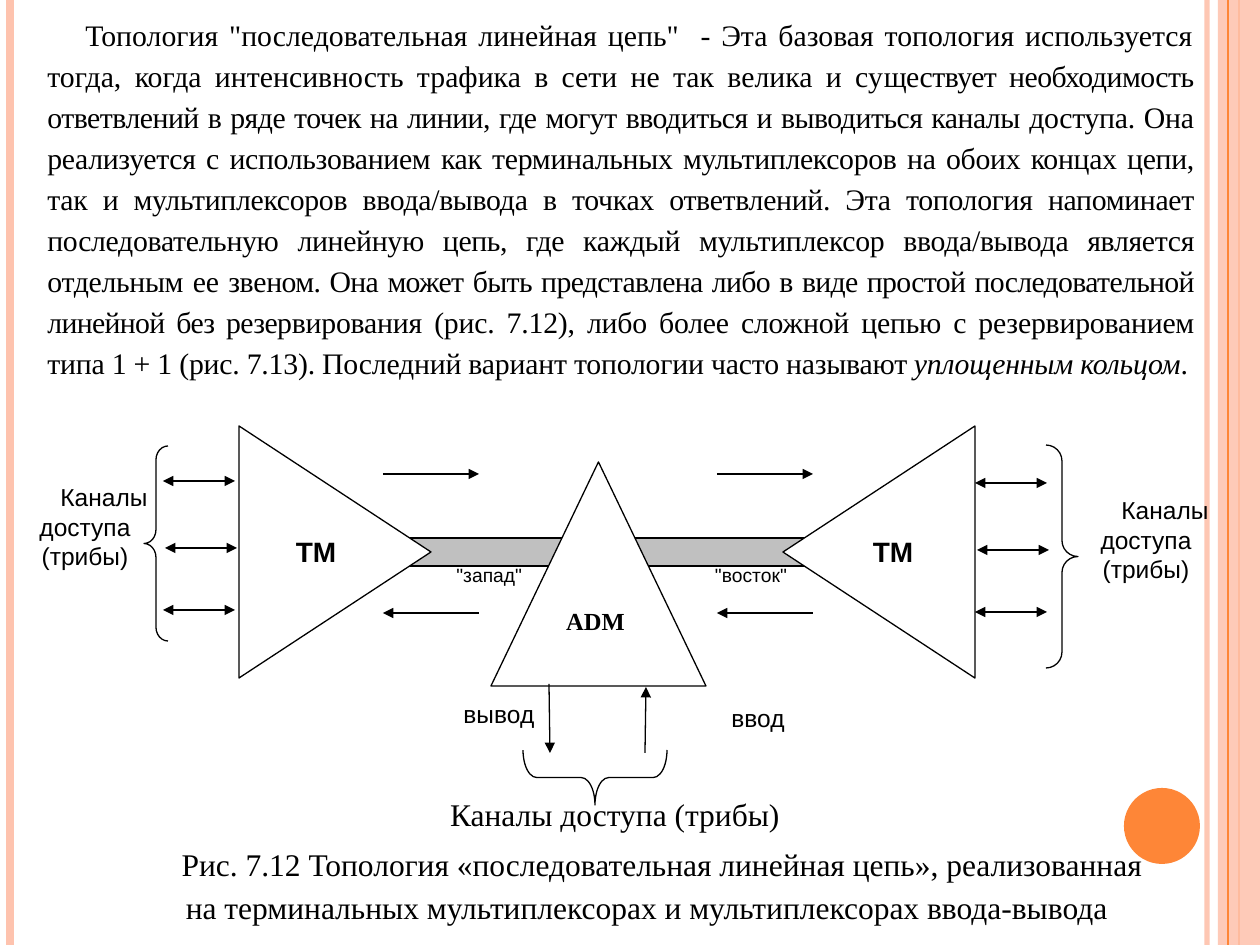
import pptx
import pptx.util
import pptx.dml.color
import pptx.enum.shapes
import pptx.enum.text
import pptx.oxml
import pptx.oxml.ns
from dataclasses import dataclass

SCALE = 914400 / 126
W, H = 1260, 945
MSO = pptx.enum.shapes.MSO_SHAPE
ALIGN = pptx.enum.text.PP_ALIGN


@dataclass(frozen=True)
class Theme:
    ink: str = "000000"
    paper: str = "FFFFFF"
    bar: str = "C0C0C0"
    accent: str = "FE8637"
    pale: str = "FEC3AE"
    serif: str = "Times New Roman"
    sans: str = "Arial"
    body: int = 17
    caption: int = 18
    node: int = 16
    label: int = 14
    small: int = 11
    stroke: float = 0.75


T = Theme()


def px(n):
    return pptx.util.Emu(round(n * SCALE))


def rgb(c):
    return pptx.dml.color.RGBColor.from_string(c)


def sub(parent, tag, **attrs):
    child = parent.makeelement(pptx.oxml.ns.qn(tag), attrs)
    parent.append(child)
    return child


def set_alpha(fill, percent):
    clr = fill._xPr.find(".//" + pptx.oxml.ns.qn("a:srgbClr"))
    sub(clr, "a:alpha", val=str(percent * 1000))


def add_text(s, box, text, font=T.sans, size=T.label, align=ALIGN.CENTER, bold=False,
             indent=38, margin=0, spacing=None, inset=None):
    sp = s.shapes.add_textbox(*map(px, box))
    tf = sp.text_frame
    tf.word_wrap = True
    if inset is not None:
        tf.margin_left = tf.margin_right = px(inset)
    p = tf.paragraphs[0]
    p.alignment = align
    p.line_spacing = spacing
    pPr = p._p.get_or_add_pPr()
    pPr.set("marL", str(px(margin)))
    pPr.set("indent", str(px(indent)))
    runs = [(text, 0, False)] if isinstance(text, str) else text
    for content, track, italic in runs:
        for i, part in enumerate(content.split("\v")):
            if i:
                p.add_line_break()
            r = p.add_run()
            r.text = part
            r.font.name, r.font.size = font, pptx.util.Pt(size)
            r.font.bold, r.font.italic = bold, italic
            r.font.color.rgb = rgb(T.ink)
            if track:
                r._r.get_or_add_rPr().set("spc", str(track))
    return sp


def add_shape(s, kind, box, fill=None, line=T.ink, rotation=0, adj=()):
    x, y, w, h = box
    if rotation in (90, 270):
        x, y, w, h = x + (w - h) / 2, y + (h - w) / 2, h, w
    sp = s.shapes.add_shape(kind, *map(px, (x, y, w, h)))
    sp.shadow.inherit = False
    sp.rotation = rotation
    for i, value in enumerate(adj):
        sp.adjustments[i] = value
    if fill:
        sp.fill.solid()
        sp.fill.fore_color.rgb = rgb(fill)
    else:
        sp.fill.background()
    if line:
        sp.line.color.rgb = rgb(line)
        sp.line.width = pptx.util.Pt(T.stroke)
    else:
        sp.line.fill.background()
    return sp


def add_line(s, start, end, color=T.ink, width=T.stroke, head=False, tail=False):
    c = s.shapes.add_connector(pptx.enum.shapes.MSO_CONNECTOR.STRAIGHT,
                               *map(px, (*start, *end)))
    c.line.color.rgb = rgb(color)
    c.line.width = pptx.util.Pt(width)
    ln = c.line._get_or_add_ln()
    for tag, wanted in (("a:headEnd", head), ("a:tailEnd", tail)):
        if wanted:
            sub(ln, tag, type="triangle")
    sub(c._element.spPr, "a:effectLst")
    return c


def add_frame(s, box):
    x, y, w, h = box
    for dx, color, width, alpha in ((1207, T.pale, 3, 93), (10, T.pale, 4.5, 100),
                                    (1239, T.accent, 1.5, 100)):
        c = add_line(s, (x + dx, y), (x + dx, y + h), color, width)
        if alpha < 100:
            set_alpha(c.line.fill, alpha)
    band = add_shape(s, MSO.RECTANGLE, (x + 1218, y, w - 1218, h), T.pale, None)
    set_alpha(band.fill, 87)
    add_line(s, (x + 1228, y), (x + 1228, y + h), T.accent)
    add_shape(s, MSO.OVAL, (x + 1124, y + 788, 76, 76), T.accent, None)


def add_intro(s, box):
    add_text(s, box, [
        ("Топология \"последовательная линейная цепь\"  - Эта базовая топология используется тогда, "
         "когда интенсивность трафика в сети не так велика и су", 0, False),
        ("ществует необходимость ответвлений в ряде точек на линии, где могут вводиться "
         "и выводиться кана", -30, False),
        ("лы доступа. Она реализуется с использованием как терминальных мультиплексоров на обоих "
         "концах цепи, так и мультиплексоров ввода/вывода в точках ответвлений. "
         "Эта топология напоминает после", -20, False),
        ("довательную линейную цепь, где каждый мультиплексор ввода/вывода является "
         "отдельным ее зве", -20, False),
        ("ном. Она может быть представлена либо в виде простой последовательной линейной "
         "без резер", -40, False),
        ("вирования (рис. 7.12), либо более сложной цепью с резервированием типа 1 + 1 (рис. 7.13). "
         "Последний вариант топологии часто называют ", -15, False),
        ("уплощенным кольцом", -15, True),
        (".", -15, False),
    ], font=T.serif, size=T.body, align=ALIGN.JUSTIFY, spacing=1.15)


def add_tributaries(s, box, brace, brace_box, adj, arrows, label):
    x, y = box[:2]
    ax, ay = x + arrows[0], y + arrows[1]
    for dx, dy in ((0, 0), (2, 67), (0, 129)):
        add_line(s, (ax + dx, ay + dy), (ax + dx + 72, ay + dy), head=True, tail=True)
    bx, by, bw, bh = brace_box
    add_shape(s, brace, (x + bx, y + by, bw, bh), adj=adj)
    add_text(s, (x + label[0], y + label[1], 168, 168), "Каналы доступа (трибы)")


def add_terminal(s, box, rotation, label_x):
    x, y = box[:2]
    add_shape(s, MSO.ISOSCELES_TRIANGLE, box, T.paper, rotation=rotation)
    add_text(s, (x + label_x, y + 102, 90, 60), "ТМ", size=T.node, bold=True, indent=0)


def add_chain(s, box):
    x, y = box[:2]
    add_shape(s, MSO.RECTANGLE, (x + 171, y + 112, 406, 28), T.bar)
    add_terminal(s, (x, y, 192, 252), 90, 32)
    add_terminal(s, (x + 544, y, 192, 252), 270, 65)
    add_shape(s, MSO.ISOSCELES_TRIANGLE, (x + 252, y + 36, 215, 224), T.paper)
    add_text(s, (x + 258, y + 174, 159, 60), "ADМ", font=T.serif, bold=True)
    for left in (x + 144, x + 478):
        add_line(s, (left, y + 48), (left + 96, y + 48), tail=True)
        add_line(s, (left + 96, y + 187), (left, y + 187), tail=True)
    add_text(s, (x + 167, y + 131, 144, 55), "\"запад\"", size=T.small, align=ALIGN.JUSTIFY)
    add_text(s, (x + 418, y + 131, 150, 65), "\"восток\"", size=T.small, inset=5)


def add_drop(s, box):
    x, y = box[:2]
    add_line(s, (x + 156, y), (x + 157, y + 69), tail=True)
    add_line(s, (x + 252, y + 69), (x + 253, y + 3), tail=True)
    add_shape(s, MSO.LEFT_BRACE, (x + 130, y + 66, 144, 55), rotation=270, adj=(0.25, 0.5))
    add_text(s, (x, y + 105, 406, 84), "Каналы доступа (трибы)", font=T.serif, size=T.caption)
    add_text(s, (x + 20, y + 9, 168, 87), "вывод", align=ALIGN.LEFT)
    add_text(s, (x + 262, y + 13, 168, 62), "ввод")


def add_caption(s, box):
    add_text(s, box, "Рис. 7.12 Топология «последовательная линейная цепь», реализованная \v"
             "на терминальных мультиплексорах и мультиплексорах ввода-вывода",
             font=T.serif, size=T.caption, margin=63, spacing=1.15)


def main():
    prs = pptx.Presentation()
    prs.slide_width, prs.slide_height = px(W), px(H)
    s = prs.slides.add_slide(prs.slide_layouts[6])
    s.background.fill.solid()
    s.background.fill.fore_color.rgb = rgb(T.paper)
    add_frame(s, (0, 0, W, H))
    add_intro(s, (35, 5, 1171, 382))
    add_tributaries(s, (1, 446, 236, 198), MSO.LEFT_BRACE, (143, 0, 24, 195),
                    (0.58, 0.5), (162, 35), (0, 30))
    add_tributaries(s, (975, 445, 255, 223), MSO.RIGHT_BRACE, (71, 0, 32, 223),
                    (0.5, 0.5), (0, 38), (87, 44))
    add_chain(s, (239, 426, 736, 260))
    add_drop(s, (393, 684, 431, 189))
    add_caption(s, (1, 833, 1229, 101))
    prs.save("out.pptx")


if __name__ == "__main__":
    main()
